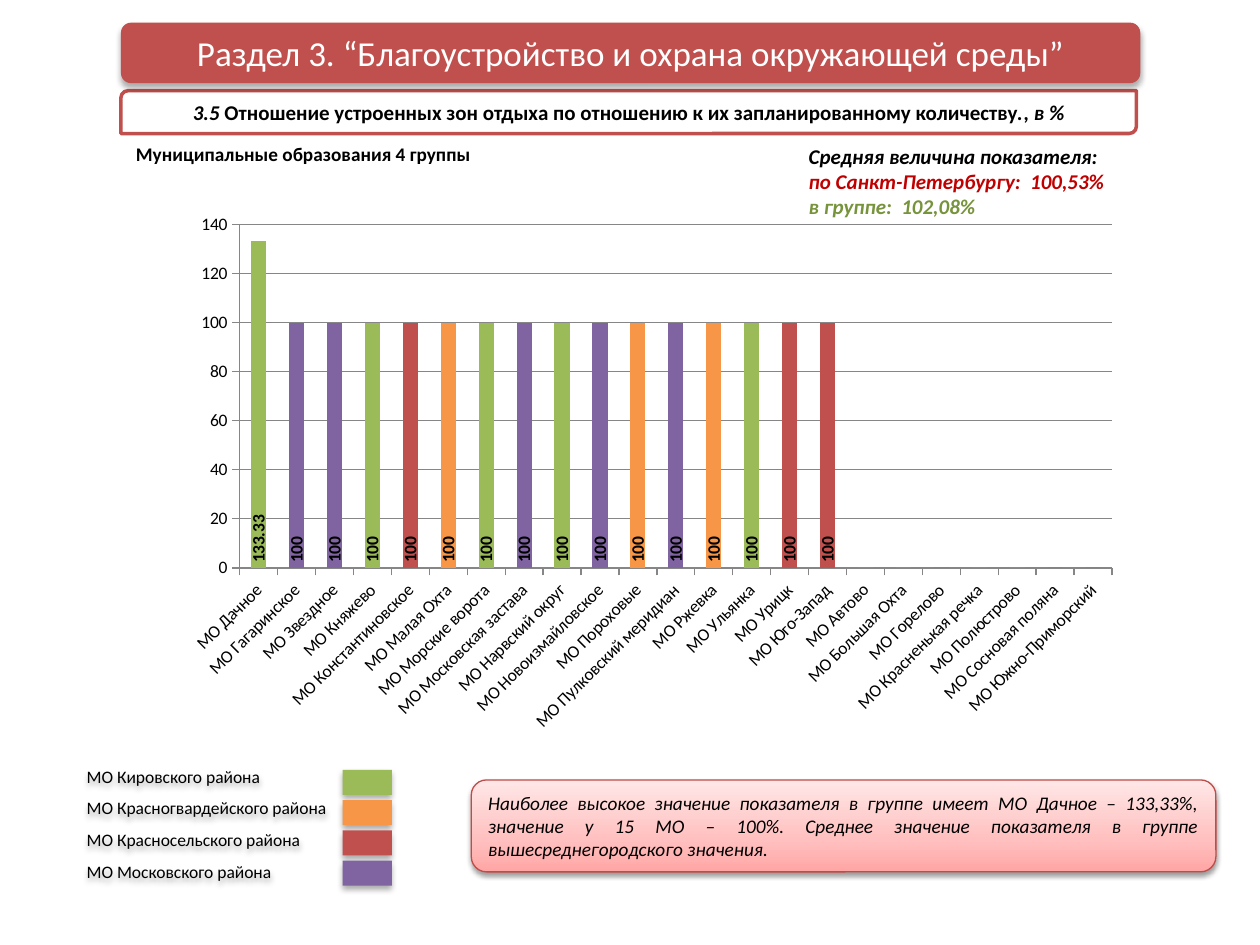
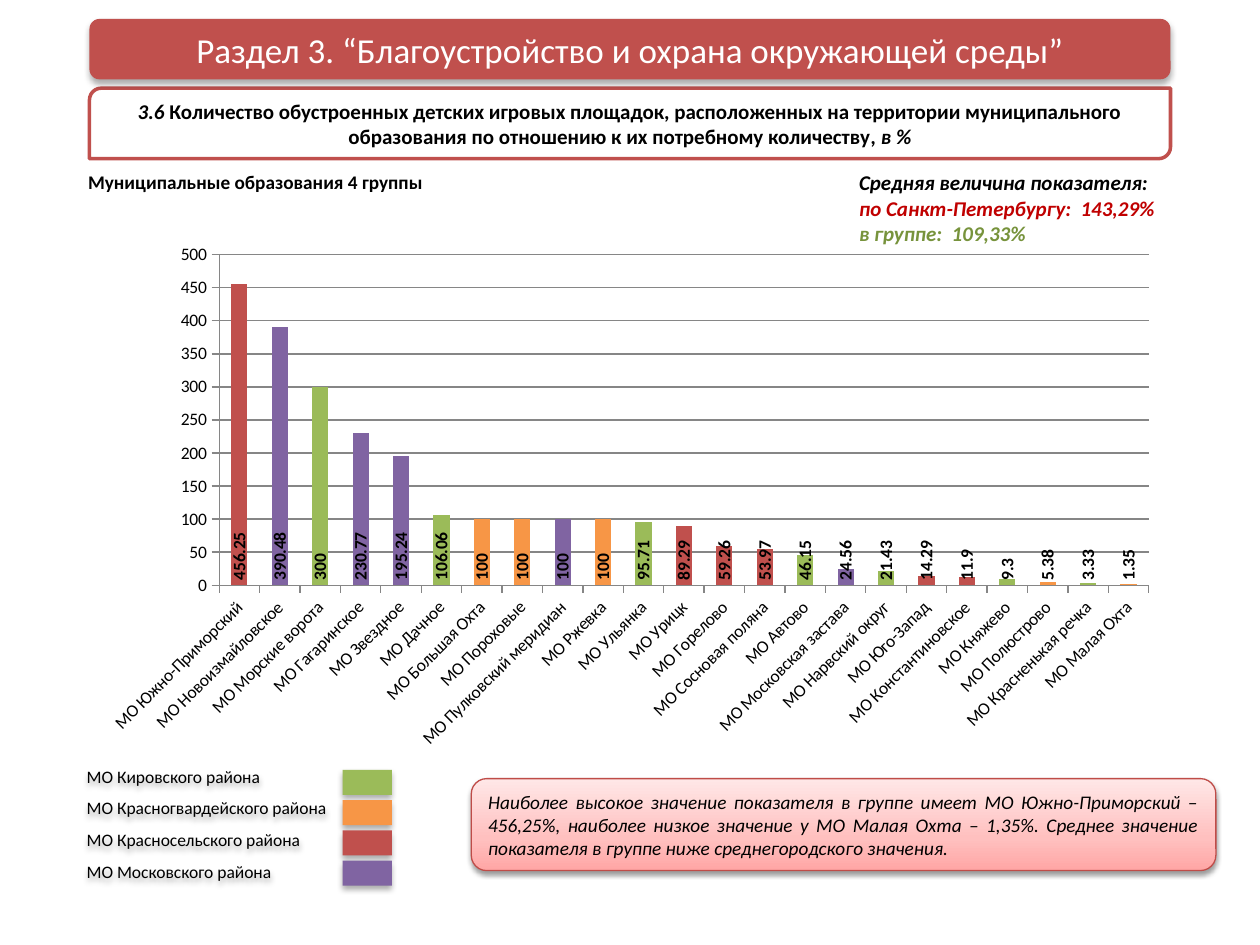
from copy import deepcopy

from lxml.etree import SubElement
from pptx import Presentation
from pptx.chart.data import CategoryChartData
from pptx.dml.color import RGBColor
from pptx.enum.chart import XL_CHART_TYPE as ChartType
from pptx.enum.chart import XL_LABEL_POSITION as LabelPosition
from pptx.enum.chart import XL_TICK_MARK as TickMark
from pptx.enum.shapes import MSO_SHAPE as ShapeType
from pptx.enum.text import MSO_ANCHOR as Anchor
from pptx.enum.text import MSO_AUTO_SIZE as AutoSize
from pptx.enum.text import PP_ALIGN as Align
from pptx.oxml.ns import qn
from pptx.util import Pt

PX = 9144  # 100 px to the inch
FONT = "Calibri"

BLACK = RGBColor(0x00, 0x00, 0x00)
WHITE = RGBColor(0xFF, 0xFF, 0xFF)
RED = RGBColor(0xC0, 0x50, 0x4D)
GREEN = RGBColor(0x9B, 0xBB, 0x59)
ORANGE = RGBColor(0xF7, 0x96, 0x46)
PURPLE = RGBColor(0x80, 0x64, 0xA2)
CITY_RED = RGBColor(0xC0, 0x00, 0x00)
GROUP_GREEN = RGBColor(0x77, 0x93, 0x3C)
GRID_GRAY = RGBColor(0x86, 0x86, 0x86)
SUMMARY_LINE = RGBColor(0xBF, 0x4C, 0x48)
SUMMARY_STOPS = [
    (0, RGBColor(0xFF, 0xA6, 0xA5)),
    (0.35, RGBColor(0xFF, 0xC0, 0xBF)),
    (1, RGBColor(0xFF, 0xE7, 0xE7)),
]

# Shadow settings: opacity %, blur pt, distance pt
BLOCK_SHADOW = (32, 3.5, 2.2)
SUMMARY_SHADOW = (38, 3.1, 1.6)

SECTION_TITLE = "Раздел 3. “Благоустройство и охрана окружающей среды”"
GROUP_TITLE = "Муниципальные образования 4 группы"

DISTRICTS = [
    ("МО Кировского района", GREEN,
     ["Дачное", "Княжево", "Морские ворота", "Нарвский округ", "Ульянка",
      "Автово", "Красненькая речка"]),
    ("МО Красногвардейского района", ORANGE,
     ["Малая Охта", "Пороховые", "Ржевка", "Большая Охта", "Полюстрово"]),
    ("МО Красносельского района", RED,
     ["Константиновское", "Урицк", "Юго-Запад", "Горелово",
      "Сосновая поляна", "Южно-Приморский"]),
    ("МО Московского района", PURPLE,
     ["Гагаринское", "Звездное", "Московская застава", "Новоизмайловское",
      "Пулковский меридиан"]),
]
DISTRICT_COLOR = {name: color for _, color, names in DISTRICTS for name in names}

REST_AREAS = {
    "Дачное": 133.33,
    **dict.fromkeys(
        ["Гагаринское", "Звездное", "Княжево", "Константиновское",
         "Малая Охта", "Морские ворота", "Московская застава",
         "Нарвский округ", "Новоизмайловское", "Пороховые",
         "Пулковский меридиан", "Ржевка", "Ульянка", "Урицк", "Юго-Запад"], 100),
    **dict.fromkeys(
        ["Автово", "Большая Охта", "Горелово", "Красненькая речка",
         "Полюстрово", "Сосновая поляна", "Южно-Приморский"], 0),
}
PLAYGROUNDS = {
    "Южно-Приморский": 456.25, "Новоизмайловское": 390.48,
    "Морские ворота": 300, "Гагаринское": 230.77, "Звездное": 195.24,
    "Дачное": 106.06, "Большая Охта": 100, "Пороховые": 100,
    "Пулковский меридиан": 100, "Ржевка": 100, "Ульянка": 95.71,
    "Урицк": 89.29, "Горелово": 59.26, "Сосновая поляна": 53.97,
    "Автово": 46.15, "Московская застава": 24.56, "Нарвский округ": 21.43,
    "Юго-Запад": 14.29, "Константиновское": 11.9, "Княжево": 9.3,
    "Полюстрово": 5.38, "Красненькая речка": 3.33, "Малая Охта": 1.35,
}


def emu(box):
    return [length * PX for length in box]


def format_font(font, size, color=BLACK, bold=False, italic=False):
    font.name, font.size = FONT, Pt(size)
    font.bold, font.italic = bold, italic
    font.color.rgb = color


def add_shadow(shape, opacity, blur, distance):
    effects = shape._element.spPr.find(qn("a:effectLst"))
    shadow = SubElement(effects, qn("a:outerShdw"), blurRad=str(Pt(blur)),
                        dist=str(Pt(distance)), dir="5400000", rotWithShape="0")
    color = SubElement(shadow, qn("a:srgbClr"), val=str(BLACK))
    SubElement(color, qn("a:alpha"), val=str(opacity * 1000))


def add_block(slide, kind, box, fill=None, line=None, line_width=1, shadow=None):
    shape = slide.shapes.add_shape(kind, *emu(box))
    shape.shadow.inherit = False
    if fill is not None:
        shape.fill.solid()
        shape.fill.fore_color.rgb = fill
    if line is None:
        shape.line.fill.background()
    else:
        shape.line.color.rgb = line
        shape.line.width = Pt(line_width)
    if shadow:
        add_shadow(shape, *shadow)
    return shape


def write(shape, paragraphs, align=Align.LEFT, anchor=Anchor.MIDDLE, wrap=True,
          space_after=0):
    """Each paragraph is a list of runs: (text, font settings)."""
    frame = shape.text_frame
    frame.word_wrap = wrap
    frame.auto_size = AutoSize.SHAPE_TO_FIT_TEXT
    frame.vertical_anchor = anchor
    for index, runs in enumerate(paragraphs):
        paragraph = frame.add_paragraph() if index else frame.paragraphs[0]
        paragraph.alignment = align
        paragraph.space_after = Pt(space_after)
        for text, settings in runs:
            run = paragraph.add_run()
            run.text = text
            format_font(run.font, **settings)


def add_text(slide, box, paragraphs, **options):
    shape = slide.shapes.add_textbox(*emu(box))
    write(shape, paragraphs, anchor=Anchor.TOP, **options)
    return shape


def add_header(slide, title_box, subtitle_box, number, indicator):
    subtitle = add_block(slide, ShapeType.ROUND_2_DIAG_RECTANGLE, subtitle_box,
                         WHITE, RED, 2)
    plain = dict(size=12, bold=True)
    slanted = dict(plain, italic=True)
    write(subtitle, [[(number + " ", slanted), (indicator, plain),
                      (", в %", slanted)]], Align.CENTER)
    title = add_block(slide, ShapeType.ROUNDED_RECTANGLE, title_box, RED,
                      shadow=BLOCK_SHADOW)
    write(title, [[(SECTION_TITLE, dict(size=20, color=WHITE))]], Align.CENTER)


def add_averages(slide, box, city, group):
    lines = [("Средняя величина показателя:", BLACK),
             (f"по Санкт-Петербургу:  {city}", CITY_RED),
             (f"в группе:  {group}", GROUP_GREEN)]
    add_text(slide, box,
             [[(text, dict(size=12, color=color, bold=True, italic=True))]
              for text, color in lines], wrap=False)


def add_legend(slide):
    labels = add_text(slide, (59, 603, 284, 103),
                      [[(label, dict(size=10))] for label, _, _ in DISTRICTS],
                      space_after=6)
    labels.shadow.inherit = False
    add_shadow(labels, *BLOCK_SHADOW)
    for row, (_, color, _) in enumerate(DISTRICTS):
        add_block(slide, ShapeType.RECTANGLE, (272, 611 + 24 * row, 39, 20),
                  color, shadow=BLOCK_SHADOW)


def add_summary(slide, top, text):
    shape = add_block(slide, ShapeType.ROUNDED_RECTANGLE, (374, top, 591, 73),
                      line=SUMMARY_LINE, line_width=0.75, shadow=SUMMARY_SHADOW)
    shape.fill.gradient()
    shape.fill.gradient_angle = 90
    stop_list = next(shape._element.spPr.iter(qn("a:gsLst")))
    stop_list.append(deepcopy(stop_list[0]))
    for stop, (position, color) in zip(shape.fill.gradient_stops, SUMMARY_STOPS):
        stop.position = position
        stop.color.rgb = color
    write(shape, [[(text, dict(size=11, italic=True))]], Align.JUSTIFY)


# Chart
def rotate_text(element, degrees):
    body = next(element.iter(qn("a:bodyPr")))
    body.set("rot", str(degrees * 60000))
    body.set("vert", "horz")


def set_plot_layout(chart, x, y, width, height):
    plot_area = next(chart._chartSpace.iter(qn("c:plotArea")))
    for old_layout in plot_area.findall(qn("c:layout")):
        plot_area.remove(old_layout)
    layout = SubElement(plot_area, qn("c:layout"))
    plot_area.insert(0, layout)
    manual = SubElement(layout, qn("c:manualLayout"))
    settings = dict(layoutTarget="inner", xMode="edge", yMode="edge",
                    x=x, y=y, w=width, h=height)
    for tag, value in settings.items():
        SubElement(manual, qn("c:" + tag), val=str(value))


def hide_labels(data_labels, indexes):
    element = data_labels._element
    for place, index in enumerate(indexes):
        label = SubElement(element, qn("c:dLbl"))
        SubElement(label, qn("c:idx"), val=str(index))
        SubElement(label, qn("c:delete"), val="1")
        element.insert(place, label)


def add_indicator_chart(slide, box, values, maximum, step, layout):
    data = CategoryChartData()
    data.categories = [f"МО {name}" for name in values]
    data.add_series("Series 1", values.values())
    chart = slide.shapes.add_chart(ChartType.COLUMN_CLUSTERED, *emu(box), data).chart
    chart.has_title = False
    chart.has_legend = False
    format_font(chart.font, 10)
    set_plot_layout(chart, *layout)

    for axis in (chart.category_axis, chart.value_axis):
        axis.major_tick_mark = TickMark.OUTSIDE
        axis.minor_tick_mark = TickMark.NONE
        axis.format.line.color.rgb = GRID_GRAY
        format_font(axis.tick_labels.font, 10)
    rotate_text(chart.category_axis._element, -45)
    value_axis = chart.value_axis
    value_axis.minimum_scale, value_axis.maximum_scale = 0, maximum
    value_axis.major_unit = step
    value_axis.has_major_gridlines = True
    value_axis.major_gridlines.format.line.color.rgb = GRID_GRAY

    plot = chart.plots[0]
    plot.gap_width = 150
    plot.vary_by_categories = False
    series = plot.series[0]
    series.format.fill.solid()
    series.format.fill.fore_color.rgb = GREEN
    for index, name in enumerate(values):
        if DISTRICT_COLOR[name] != GREEN:
            fill = series.points[index].format.fill
            fill.solid()
            fill.fore_color.rgb = DISTRICT_COLOR[name]

    labels = series.data_labels
    labels.show_value = True
    labels.position = LabelPosition.INSIDE_BASE
    format_font(labels.font, 10, bold=True)
    rotate_text(labels._element, -90)
    hide_labels(labels, [index for index, value in enumerate(values.values())
                         if not value])


def add_indicator_slide(presentation, header, group_box, averages, summary, chart):
    slide = presentation.slides.add_slide(presentation.slide_layouts[6])
    add_header(slide, *header)
    add_text(slide, group_box, [[(GROUP_TITLE, dict(size=11, bold=True))]])
    add_averages(slide, *averages)
    add_legend(slide)
    add_summary(slide, *summary)
    add_indicator_chart(slide, *chart)


def main():
    presentation = Presentation()
    presentation.slide_width, presentation.slide_height = emu((1000, 750))

    # Rest areas
    add_indicator_slide(
        presentation,
        header=((96, 18, 809, 48), (96, 72, 806, 34), "3.5",
                "Отношение устроенных зон отдыха по отношению к их "
                "запланированному количеству."),
        group_box=(98, 108, 316, 29),
        averages=((632, 109, 260, 71), "100,53%", "102,08%"),
        summary=(619, "Наиболее высокое значение показателя в группе имеет "
                 "МО Дачное – 133,33%, значение у 15 МО – 100%. Среднее значение "
                 "показателя в группе вышесреднегородского значения."),
        chart=((96, 162, 806, 437), REST_AREAS, 140, 20, (0.117, 0.037, 0.859, 0.624)))

    # Playgrounds
    add_indicator_slide(
        presentation,
        header=((71, 15, 858, 48), (71, 70, 858, 56), "3.6",
                "Количество обустроенных детских игровых площадок, расположенных "
                "на территории муниципального образования по отношению к их "
                "потребному количеству"),
        group_box=(60, 130, 308, 29),
        averages=((672, 130, 257, 71), "143,29%", "109,33%"),
        summary=(618, "Наиболее высокое значение показателя в группе имеет "
                 "МО Южно-Приморский – 456,25%, наиболее низкое значение у МО Малая "
                 "Охта – 1,35%. Среднее значение показателя в группе ниже "
                 "среднегородского значения."),
        chart=((71, 186, 858, 417), PLAYGROUNDS, 500, 50, (0.12, 0.039, 0.86, 0.629)))

    presentation.save("out.pptx")


if __name__ == "__main__":
    main()
